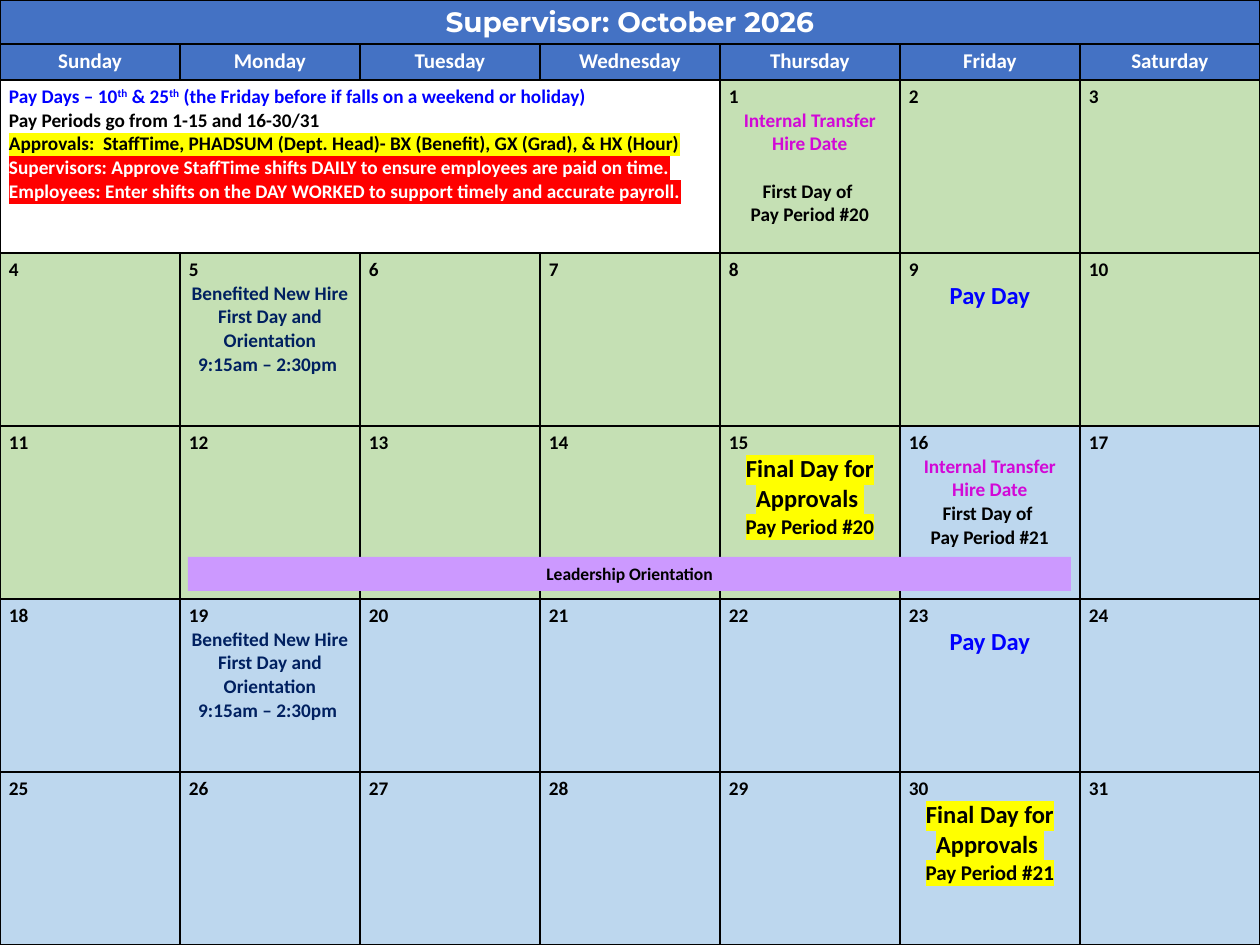
from lxml import etree
from pptx import Presentation
from pptx import util as u
from pptx.dml.color import RGBColor
from pptx.enum import shapes, text
from pptx.oxml.ns import qn

COLORS = {
    "header": "4472C4", "white": "FFFFFF", "black": "000000",
    "period 20": "C5E0B4", "period 21": "BDD7EE", "blue": "0000FF",
    "navy": "002060", "magenta": "D208D7", "yellow": "FFFF00",
    "red": "FF0000", "bar": "CC99FF",
}
BACKGROUND = [(0, "F6F8FC"), (74, "ABC0E4"), (83, "ABC0E4"), (100, "C7D5ED")]

TITLE = "Supervisor: October 2026"
WEEKDAYS = ["Sunday", "Monday", "Tuesday", "Wednesday", "Thursday", "Friday", "Saturday"]
FIRST_COLUMN, LAST_DAY, PERIOD_END = 4, 31, 15

# A line is a list of (text, format) spans.
PAY_DAY_RULE = [("Pay Days – 10", False), ("th", True), (" & 25", False), ("th", True),
                (" (the Friday before if falls on a weekend or holiday)", False)]
NOTES = [
    [(words, dict(color="blue", raised=raised)) for words, raised in PAY_DAY_RULE],
    [("Pay Periods go from 1-15 and 16-30/31", {})],
    [("Approvals:  StaffTime, PHADSUM (Dept. Head)- BX (Benefit), GX (Grad), & HX (Hour)",
      dict(highlight="yellow"))],
    [("Supervisors: Approve StaffTime shifts DAILY to ensure employees are paid on time.",
      dict(color="white", highlight="red"))],
    [("Employees: Enter shifts on the DAY WORKED to support timely and accurate payroll.",
      dict(color="white", highlight="red"))],
]


def period_start(number, gap=0):
    return [("Internal Transfer Hire Date", dict(color="magenta")),
            ("First Day of ", dict(before=gap)),
            (f"Pay Period #{number}", {})]


def approvals(number):
    return [("Final Day for Approvals ", dict(size=14, highlight="yellow")),
            (f"Pay Period #{number}", dict(size=12, highlight="yellow"))]


NEW_HIRES = [("Benefited New Hire First Day and Orientation", dict(color="navy")),
             ("9:15am – 2:30pm ", dict(color="navy"))]
PAY_DAY = [("Pay Day", dict(size=14, color="blue"))]
EVENTS = {1: period_start(20, gap=13.4), 5: NEW_HIRES, 9: PAY_DAY, 15: approvals(20),
          16: period_start(21), 19: NEW_HIRES, 23: PAY_DAY, 30: approvals(21)}
BAR_TEXT = "Leadership Orientation"

COLUMN_WIDTH, ROW_HEIGHTS = 180, [43, 36] + [173] * 5
BAR = (188, 557, 883, 34)


def px(length):
    return u.Emu(round(length * 914400 / 126))


def rgb(name):
    return RGBColor.from_string(COLORS[name])


def add_span(para, words, size=11, color="black", font="Calibri", highlight=None, raised=False):
    span = para.add_run()
    span.text = words
    span.font.size, span.font.bold, span.font.name = u.Pt(size), True, font
    span.font.color.rgb = rgb(color)
    props = span.font.fill._xPr
    if raised:
        props.set("baseline", "30000")
    if highlight:
        mark = etree.Element(qn("a:highlight"))
        etree.SubElement(mark, qn("a:srgbClr"), val=COLORS[highlight])
        props.find(qn("a:solidFill")).addnext(mark)


def add_line(frame, spans, centered=True, before=0):
    para = frame.paragraphs[0]
    if para.runs:
        para = frame.add_paragraph()
    para.alignment = text.PP_ALIGN.CENTER if centered else text.PP_ALIGN.LEFT
    if before:
        para.space_before = u.Pt(before)
    for words, style in spans:
        add_span(para, words, **style)


def style_cell(cell, fill):
    """Set margins, black borders and the fill."""
    cell.margin_left = cell.margin_right = px(9)
    cell.margin_top = cell.margin_bottom = px(5)
    props = cell._tc.get_or_add_tcPr()
    for side in ("lnL", "lnR", "lnT", "lnB"):
        line = etree.SubElement(props, qn(f"a:{side}"), w=str(u.Pt(1)))
        color = etree.SubElement(line, qn("a:solidFill"))
        etree.SubElement(color, qn("a:srgbClr"), val=COLORS["black"])
    cell.fill.solid()
    cell.fill.fore_color.rgb = rgb(fill)


def set_background(page):
    fill = page.background.fill
    fill.gradient()
    fill.gradient_angle = 270
    stops = fill._fill._gradFill.find(qn("a:gsLst"))
    for stop in list(stops):
        stops.remove(stop)
    for percent, color in BACKGROUND:
        stop = etree.SubElement(stops, qn("a:gs"), pos=str(percent * 1000))
        etree.SubElement(stop, qn("a:srgbClr"), val=color)


def add_calendar(page):
    columns = len(WEEKDAYS)
    table = page.shapes.add_table(len(ROW_HEIGHTS), columns, 0, 0, px(COLUMN_WIDTH * columns),
                                  px(sum(ROW_HEIGHTS))).table
    for column in table.columns:
        column.width = px(COLUMN_WIDTH)
    for row, height in zip(table.rows, ROW_HEIGHTS):
        row.height = px(height)

    for index in range(len(ROW_HEIGHTS) * columns):
        row, column = divmod(index, columns)
        day = index - 2 * columns - FIRST_COLUMN + 1
        if row < 2:
            fill = "header"
        elif day < 1:
            fill = "white"
        else:
            fill = "period 20" if day <= PERIOD_END else "period 21"
        style_cell(table.cell(row, column), fill)

    table.cell(0, 0).merge(table.cell(0, columns - 1))
    add_line(table.cell(0, 0).text_frame,
             [(TITLE, dict(size=16, color="white", font="Montserrat"))])
    for column, name in enumerate(WEEKDAYS):
        add_line(table.cell(1, column).text_frame, [(name, dict(size=12, color="white"))])

    table.cell(2, 0).merge(table.cell(2, FIRST_COLUMN - 1))
    for spans in NOTES:
        add_line(table.cell(2, 0).text_frame, spans, centered=False)

    for day in range(1, LAST_DAY + 1):
        week, column = divmod(day - 1 + FIRST_COLUMN, columns)
        frame = table.cell(week + 2, column).text_frame
        add_line(frame, [(str(day), {})], centered=False)
        for words, style in EVENTS.get(day, []):
            style = dict(style)
            before = style.pop("before", 0)
            add_line(frame, [(words, style)], before=before)


def add_bar(page):
    bar = page.shapes.add_shape(shapes.MSO_SHAPE.RECTANGLE, *map(px, BAR))
    bar.shadow.inherit = False
    bar.fill.solid()
    bar.fill.fore_color.rgb = rgb("bar")
    bar.line.fill.background()
    frame = bar.text_frame
    frame.word_wrap = True
    frame.auto_size = text.MSO_AUTO_SIZE.SHAPE_TO_FIT_TEXT
    add_line(frame, [(BAR_TEXT, dict(size=10))])


def main():
    deck = Presentation()
    deck.slide_width, deck.slide_height = px(1260), px(945)
    page = deck.slides.add_slide(deck.slide_layouts[6])
    set_background(page)
    add_calendar(page)
    add_bar(page)
    deck.save("out.pptx")


if __name__ == "__main__":
    main()
